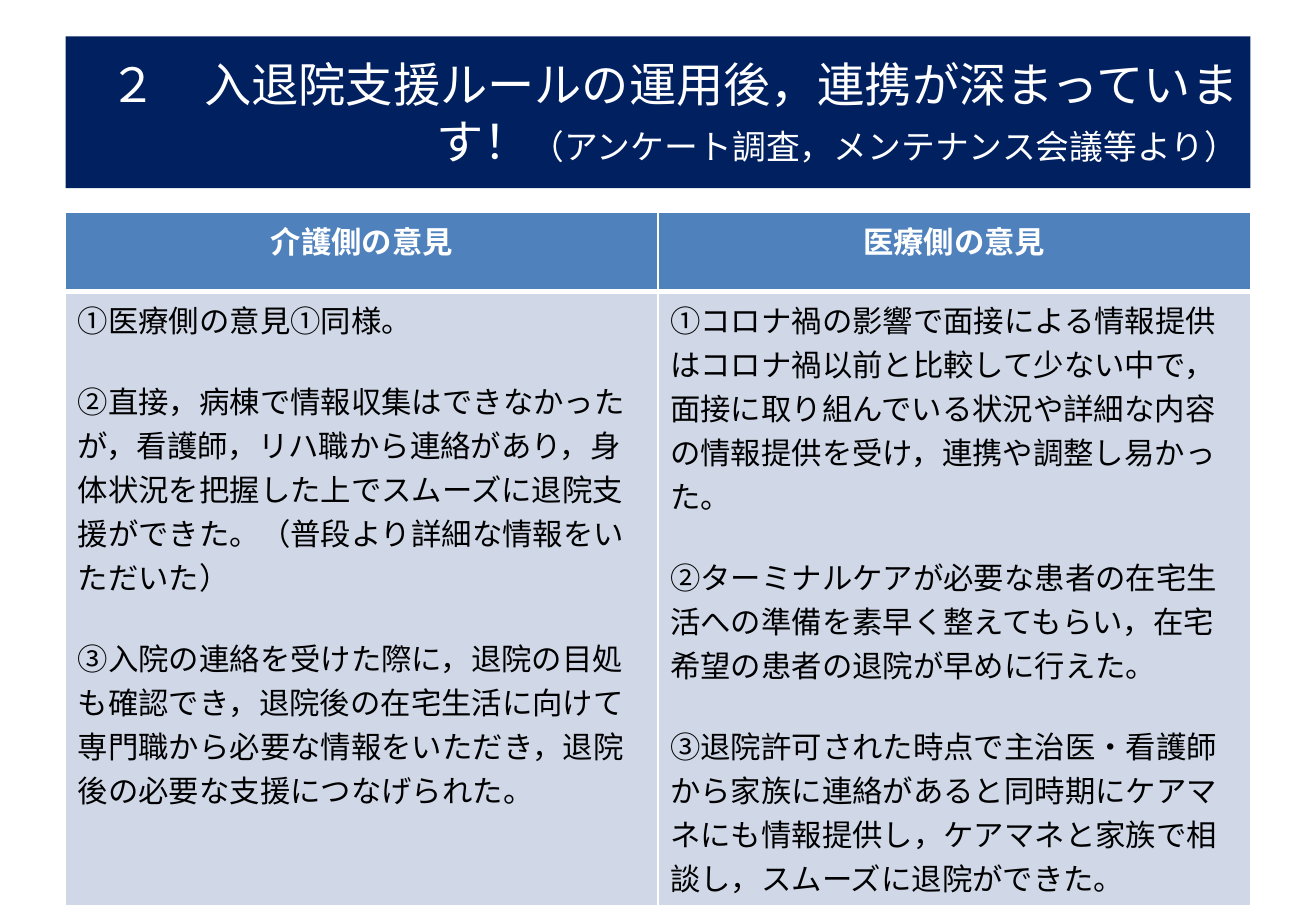
from lxml import etree
from pptx import Presentation
from pptx.dml.color import RGBColor
from pptx.enum.text import MSO_ANCHOR, MSO_AUTO_SIZE, PP_ALIGN
from pptx.oxml.ns import qn
from pptx.util import Inches, Pt

NAVY = RGBColor(0x00, 0x20, 0x60)
BLUE = RGBColor(0x4F, 0x81, 0xBD)
PALE_BLUE = RGBColor(0xD0, 0xD8, 0xE8)
WHITE = RGBColor(0xFF, 0xFF, 0xFF)
BLACK = RGBColor(0x00, 0x00, 0x00)
FONT = "Calibri"
TITLE_ONLY_LAYOUT = 5
LEFT, WIDTH = Inches(0.54), Inches(9.75)
ROW_HEIGHTS = (Inches(0.65), Inches(4.58))

TITLE_PARTS = (
    ("２　入退院支援ルールの運用後，連携が深まっています！", 28),
    ("（アンケート調査，メンテナンス会議等より）", 20),
)
OPINIONS = {
    "介護側の意見": (
        "①医療側の意見①同様。",
        "②直接，病棟で情報収集はできなかったが，看護師，リハ職から連絡があり，"
        "身体状況を把握した上でスムーズに退院支援ができた。（普段より詳細な情報をいただいた）",
        "③入院の連絡を受けた際に，退院の目処も確認でき，退院後の在宅生活に向けて"
        "専門職から必要な情報をいただき，退院後の必要な支援につなげられた。",
    ),
    "医療側の意見": (
        "①コロナ禍の影響で面接による情報提供はコロナ禍以前と比較して少ない中で，"
        "面接に取り組んでいる状況や詳細な内容の情報提供を受け，連携や調整し易かった。",
        "②ターミナルケアが必要な患者の在宅生活への準備を素早く整えてもらい，"
        "在宅希望の患者の退院が早めに行えた。",
        "③退院許可された時点で主治医・看護師から家族に連絡があると同時期に"
        "ケアマネにも情報提供し，ケアマネと家族で相談し，スムーズに退院ができた。",
    ),
}


def format_font(font, size, color, bold=False):
    font.name = FONT
    font.size = Pt(size)
    font.color.rgb = color
    font.bold = bold


def add_title(slide):
    title = slide.shapes.title
    title.left, title.top = LEFT, Inches(0.3)
    title.width, title.height = WIDTH, Inches(1.25)
    title.fill.solid()
    title.fill.fore_color.rgb = NAVY
    text_frame = title.text_frame
    text_frame.word_wrap = True
    text_frame.auto_size = MSO_AUTO_SIZE.NONE
    text_frame.vertical_anchor = MSO_ANCHOR.MIDDLE
    paragraph = text_frame.paragraphs[0]
    paragraph.alignment = PP_ALIGN.RIGHT
    for text, size in TITLE_PARTS:
        run = paragraph.add_run()
        run.text = text
        format_font(run.font, size, WHITE)


def set_borders(cell, top, bottom):
    """Draw white cell edges; top and bottom are widths in points."""
    properties = cell._tc.get_or_add_tcPr()
    widths = {"a:lnL": 1, "a:lnR": 1, "a:lnT": top, "a:lnB": bottom}
    for position, (tag, width) in enumerate(widths.items()):
        line = etree.Element(qn(tag), w=str(Pt(width)))
        fill = etree.SubElement(line, qn("a:solidFill"))
        etree.SubElement(fill, qn("a:srgbClr"), val=str(WHITE))
        properties.insert(position, line)


def fill_cell(cell, paragraphs, fill, color, bold=False, alignment=PP_ALIGN.LEFT):
    cell.fill.solid()
    cell.fill.fore_color.rgb = fill
    cell.text_frame.text = "\n".join(paragraphs)
    for index, paragraph in enumerate(cell.text_frame.paragraphs):
        paragraph.alignment = alignment
        if index:
            paragraph.space_before = Pt(22)
        format_font(paragraph.runs[0].font, 18, color, bold)


def add_opinion_table(slide):
    frame = slide.shapes.add_table(
        len(ROW_HEIGHTS), len(OPINIONS), LEFT, Inches(1.75), WIDTH, sum(ROW_HEIGHTS)
    )
    table = frame.table
    for row, height in zip(table.rows, ROW_HEIGHTS):
        row.height = height
    for column, (heading, opinions) in enumerate(OPINIONS.items()):
        header, body = table.cell(0, column), table.cell(1, column)
        fill_cell(header, [heading], BLUE, WHITE, True, PP_ALIGN.CENTER)
        fill_cell(body, opinions, PALE_BLUE, BLACK)
        set_borders(header, top=1, bottom=3)
        set_borders(body, top=3, bottom=1)


def main():
    presentation = Presentation()
    presentation.slide_width = Inches(10.83)
    presentation.slide_height = Inches(7.5)
    slide = presentation.slides.add_slide(presentation.slide_layouts[TITLE_ONLY_LAYOUT])
    add_title(slide)
    add_opinion_table(slide)
    presentation.save("out.pptx")


if __name__ == "__main__":
    main()
